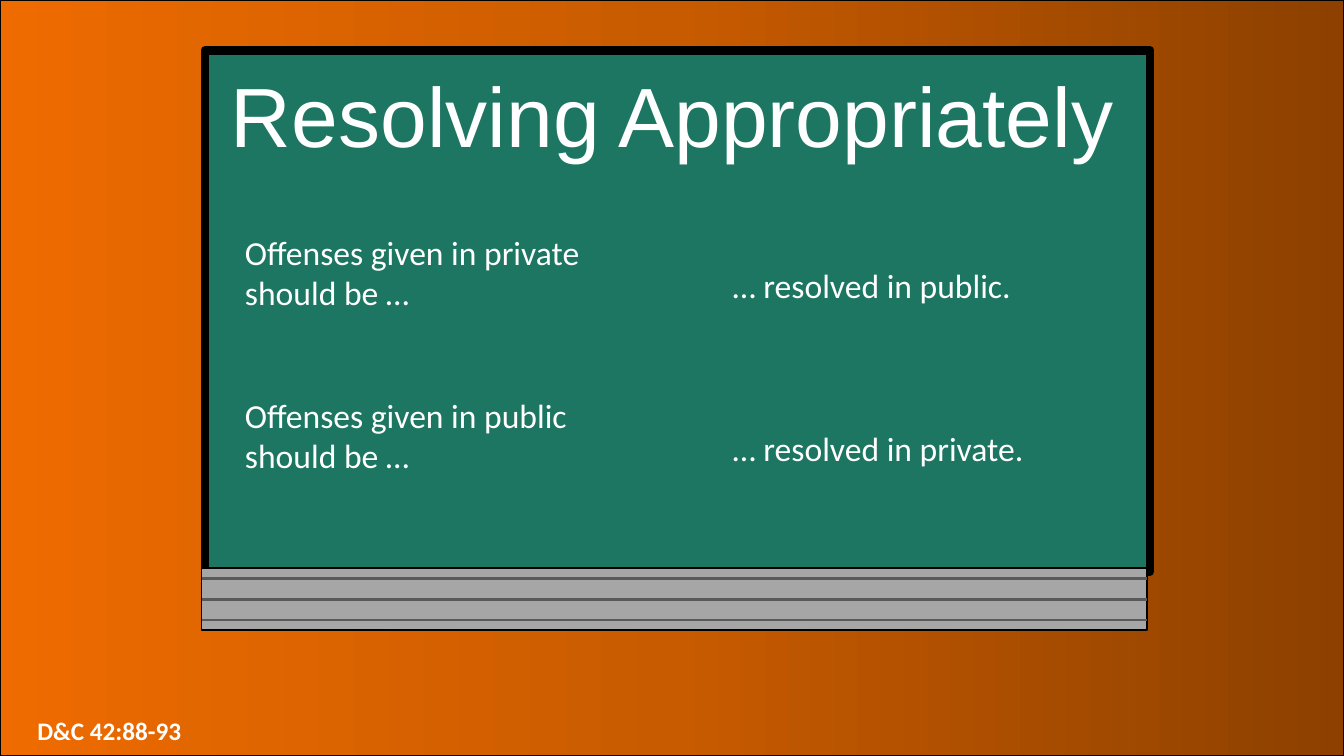
from copy import deepcopy
from dataclasses import dataclass

from lxml import etree
from pptx import Presentation
from pptx.dml.color import RGBColor
from pptx.enum.shapes import MSO_CONNECTOR, MSO_SHAPE
from pptx.enum.text import MSO_ANCHOR, MSO_AUTO_SIZE, PP_ALIGN
from pptx.oxml.ns import qn
from pptx.shapes.autoshape import Shape
from pptx.shapes.connector import Connector
from pptx.shapes.shapetree import GroupShapes, SlideShapes
from pptx.util import Cm, Pt

RECT = MSO_SHAPE.RECTANGLE
STRAIGHT = MSO_CONNECTOR.STRAIGHT
TOP = MSO_ANCHOR.TOP
FIXED = MSO_AUTO_SIZE.NONE
LEFT, CENTER = PP_ALIGN.LEFT, PP_ALIGN.CENTER

COLORS = {
    "black": "000000",
    "white": "FFFFFF",
    "board": "1C7661",
    "ledge": "A6A6A6",
    "groove": "595959",
    "dark": "8D4000",
    "middle": "C85B00",
    "bright": "EE6B00",
}
FADE = ["dark", "middle", "bright"]
WIDE, HIGH = 33.87, 19.05
GROOVE_GAP = 0.52


@dataclass
class Box:
    left: float
    top: float
    width: float
    height: float


@dataclass
class Block:
    box: Box
    lines: list[str]
    size: float
    font: str = "Calibri"
    bold: bool = False
    align: PP_ALIGN = LEFT
    gap: float = 0


BOARD = Box(5.16, 1.27, 23.83, 13.13)
LEDGE = Box(5.08, 14.33, 23.83, 1.55)
TITLE = Block(Box(4.24, 1.47, 25.4, 2.82), ["Resolving Appropriately"], 60, "Arial", align=CENTER)
GIVEN = Block(
    Box(5.92, 5.72, 9.09, 6.4),
    ["Offenses given in private should be …", "Offenses given in public should be …"],
    24,
    gap=58.6,
)
SOLVED = Block(
    Box(18.21, 6.55, 9.09, 5.38),
    ["… resolved in public.", "… resolved in private."],
    24,
    gap=87.9,
)
VERSE = Block(Box(0.69, 17.91, 12.7, 1.02), ["D&C 42:88-93"], 18, bold=True)


def paint(name: str) -> RGBColor:
    return RGBColor.from_string(COLORS[name])


def spread(box: Box) -> tuple[Cm, Cm, Cm, Cm]:
    return Cm(box.left), Cm(box.top), Cm(box.width), Cm(box.height)


def add_rect(shapes: SlideShapes | GroupShapes, box: Box, fill: str, weight: float) -> Shape:
    rect = shapes.add_shape(RECT, *spread(box))
    rect.shadow.inherit = False
    rect.fill.solid()
    rect.fill.fore_color.rgb = paint(fill)
    rect.line.color.rgb = paint("black")
    rect.line.width = Pt(weight)
    return rect


def add_fade(rect: Shape) -> None:
    rect.fill.gradient()
    rect.fill.gradient_angle = 180
    stops = rect.element.spPr.find(".//" + qn("a:gsLst"))
    stops.insert(1, deepcopy(stops[0]))
    for rank, (stop, name) in enumerate(zip(rect.fill.gradient_stops, FADE)):
        stop.position = rank / (len(FADE) - 1)
        stop.color.rgb = paint(name)


def add_groove(shapes: GroupShapes, top: float) -> Connector:
    right = LEDGE.left + LEDGE.width
    groove = shapes.add_connector(STRAIGHT, Cm(LEDGE.left), Cm(top), Cm(right), Cm(top))
    groove.line.color.rgb = paint("groove")
    groove.line.width = Pt(2)
    etree.SubElement(groove.element.spPr, qn("a:effectLst"))
    return groove


def add_board(shapes: SlideShapes) -> None:
    group = shapes.add_group_shape().shapes
    add_rect(group, BOARD, "board", 6)
    ledge = add_rect(group, LEDGE, "ledge", 1)
    center = LEDGE.top + LEDGE.height / 2
    grooves = [add_groove(group, center + step * GROOVE_GAP) for step in (-1, 0, 1)]
    grooves[1].begin_connect(ledge, 1)
    grooves[1].end_connect(ledge, 3)


def write(shape: Shape, block: Block) -> None:
    shape.left, shape.top, shape.width, shape.height = spread(block.box)
    frame = shape.text_frame
    frame.word_wrap = True
    frame.auto_size = FIXED
    frame.vertical_anchor = TOP
    frame.text = "\n".join(block.lines)
    for rank, para in enumerate(frame.paragraphs):
        para.alignment = block.align
        para.space_before = Pt(block.gap if rank else 0)
        para.font.name = block.font
        para.font.size = Pt(block.size)
        para.font.bold = block.bold
        para.font.color.rgb = paint("white")
        props = para._p.get_or_add_pPr()
        props.set("marL", "0")
        props.set("indent", "0")
        bullet = etree.Element(qn("a:buNone"))
        props.insert_element_before(bullet, "a:tabLst", "a:defRPr", "a:extLst")


def main() -> None:
    deck = Presentation()
    deck.slide_width, deck.slide_height = Cm(WIDE), Cm(HIGH)
    slide = deck.slides.add_slide(deck.slide_layouts[3])
    shapes = slide.shapes
    title, given, solved = slide.placeholders

    add_fade(add_rect(shapes, Box(0, 0, WIDE, HIGH), "middle", 1))
    write(shapes.add_textbox(*spread(VERSE.box)), VERSE)
    add_board(shapes)
    for holder, block in ((given, GIVEN), (solved, SOLVED), (title, TITLE)):
        write(holder, block)
        shapes.element.append(holder.element)

    deck.save("out.pptx")


if __name__ == "__main__":
    main()
